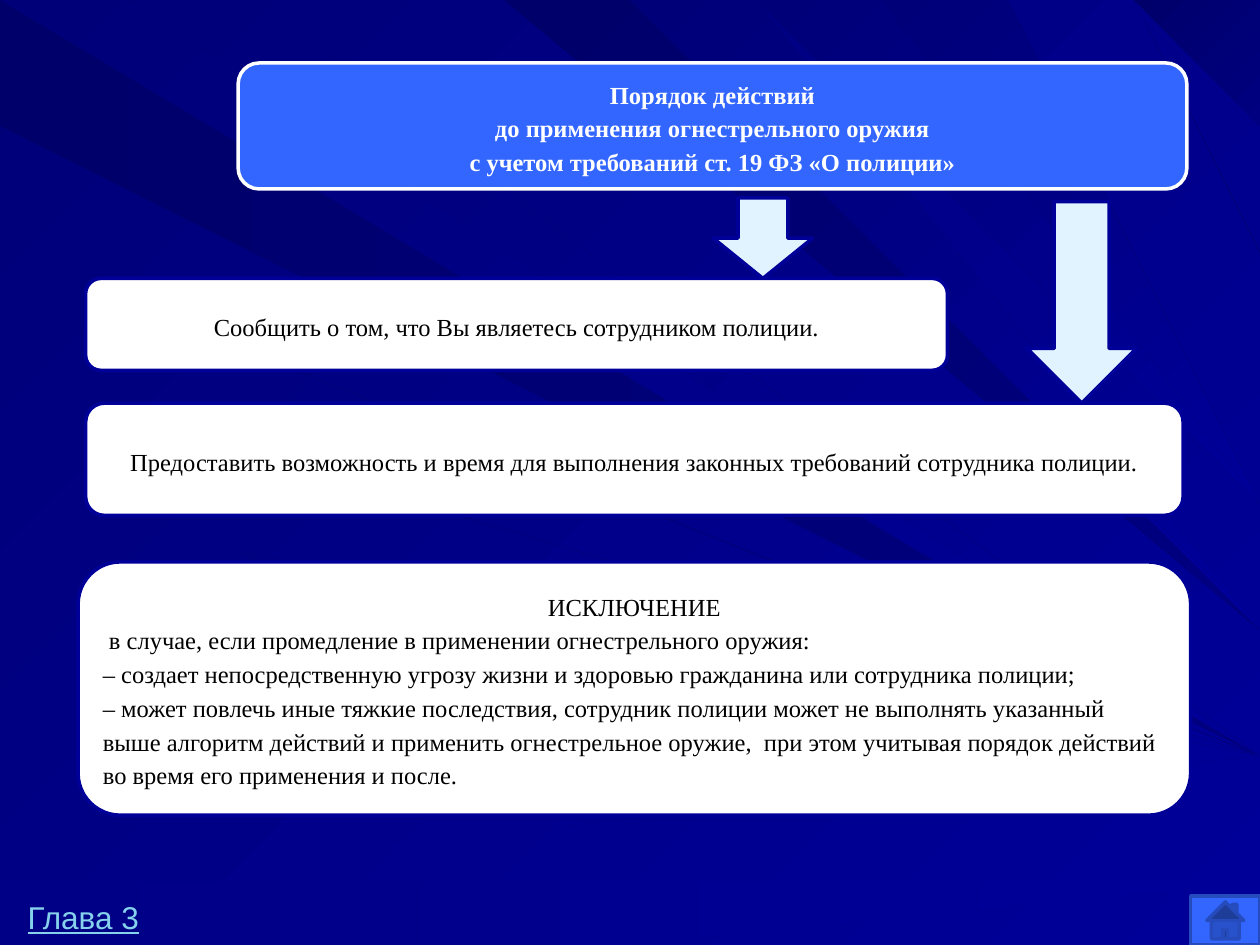
from pptx import Presentation, util as u
from pptx.dml.color import RGBColor
from pptx.enum import shapes, text

DARK, MIDDLE, LIGHT = RGBColor(0, 0, 0x6B), RGBColor(0, 0, 0x78), RGBColor(0, 0, 0x86)
NAVY, ROYAL = RGBColor(0, 0, 0x80), RGBColor(0, 0, 0x99)
SLATE = RGBColor(0x39, 0x39, 0x9E)
WHITE, BLACK = RGBColor(0xFF, 0xFF, 0xFF), RGBColor(0, 0, 0)
BLUE, BUTTON_EDGE = RGBColor(0x33, 0x66, 0xFF), RGBColor(0x26, 0x4B, 0xBD)
PALE = RGBColor(0xE0, 0xF3, 0xFF)
LINK = RGBColor(0x86, 0xD1, 0xEC)

WIDTH, HEIGHT = 10, 7.5

# Each ray: where it starts and ends on its edge, and its tip on the right edge
LEFT_RAYS = [
    (DARK, 0, 0.9, 5.7),
    (DARK, 6, 6.2, 6.3),
    (LIGHT, 6.65, 7, 6.5),
    (LIGHT, 7.35, 7.5, 6.6),
    (MIDDLE, 2.6, 2.7, 5.9),
    (DARK, 1.6, 2.3, 5.85),
    (MIDDLE, 2.8, 3.4, 6),
    (MIDDLE, 3.75, 4.4, 6.05),
    (LIGHT, 5.5, 5.6, 6.2),
]
TOP_RAYS = [
    (MIDDLE, 0.25, 1, 5.6),
    (LIGHT, 4, 4.15, 5.2),
    (DARK, 4.25, 4.9, 4.95),
    (MIDDLE, 5.4, 5.5, 4.6),
    (MIDDLE, 6.05, 6.6, 4.45),
    (DARK, 8.9, 9.3, 2.1),
    (DARK, 9.4, 9.65, 1.4),
    (MIDDLE, 2.25, 2.5, 5.5),
    (MIDDLE, 6.85, 7.7, 4.1),
    (MIDDLE, 7.85, 7.95, 3.55),
    (LIGHT, 8.15, 8.25, 3.35),
]
GLINT = [(10, 6.94), (10, 6.72), (7.56, 7.02), (8, 7.37)]

TITLE = ["Порядок действий", "до применения огнестрельного оружия",
         "с учетом требований ст. 19 ФЗ «О полиции»"]
EXCEPTION = [
    "ИСКЛЮЧЕНИЕ",
    " в случае, если промедление в применении огнестрельного оружия:",
    "‒ создает непосредственную угрозу жизни и здоровью гражданина или сотрудника полиции;",
    "‒ может повлечь иные тяжкие последствия, сотрудник полиции может не выполнять указанный "
    "выше алгоритм действий и применить огнестрельное оружие,  при этом учитывая порядок "
    "действий во время его применения и после.",
]


def fill_gradient(fill, start, end, angle):
    """Blend two colours; the angle runs clockwise."""
    fill.gradient()
    fill.gradient_angle = -angle % 360
    for stop, color in zip(fill.gradient_stops, (start, end)):
        stop.color.rgb = color


class SlideBuilder:
    body_font = "Times New Roman"
    body_size = u.Pt(14)
    line_spacing = 1.15
    line_width = u.Pt(2)

    def __init__(self, slide):
        self.slide = slide

    def background(self, start, end, angle):
        fill_gradient(self.slide.background.fill, start, end, angle)

    def facet(self, corners, start, end, angle):
        builder = self.slide.shapes.build_freeform(*corners[0], scale=u.Inches(1))
        builder.add_line_segments(corners[1:], close=True)
        shape = builder.convert_to_shape()
        shape.shadow.inherit = False
        shape.line.fill.background()
        fill_gradient(shape.fill, start, end, angle)

    def ray(self, corners, shade, angle):
        self.facet(corners, shade, NAVY if shade == DARK else ROYAL, angle)

    def preset(self, kind, box, fill, line):
        shape = self.slide.shapes.add_shape(kind, *map(u.Inches, box))
        shape.shadow.inherit = False
        shape.fill.solid()
        shape.fill.fore_color.rgb = fill
        shape.line.color.rgb = line
        shape.line.width = self.line_width
        return shape

    def arrow(self, *box):
        self.preset(shapes.MSO_SHAPE.DOWN_ARROW, box, PALE, ROYAL)

    def panel(self, box, lines, fill=WHITE, line=ROYAL, color=BLACK, bold=False, centered=None):
        """Rounded box; only the first `centered` lines are centred, or all if None."""
        shape = self.preset(shapes.MSO_SHAPE.ROUNDED_RECTANGLE, box, fill, line)
        frame = shape.text_frame
        frame.word_wrap = True
        frame.vertical_anchor = text.MSO_ANCHOR.MIDDLE
        frame.text = "\n".join(lines)
        for index, paragraph in enumerate(frame.paragraphs):
            is_centered = centered is None or index < centered
            paragraph.alignment = text.PP_ALIGN.CENTER if is_centered else text.PP_ALIGN.LEFT
            paragraph.line_spacing = self.line_spacing
            font = paragraph.runs[0].font
            font.name, font.size, font.bold = self.body_font, self.body_size, bold
            font.color.rgb = color

    def chapter_label(self, label, *box):
        frame = self.slide.shapes.add_textbox(*map(u.Inches, box)).text_frame
        frame.word_wrap = False
        frame.text = label
        font = frame.paragraphs[0].runs[0].font
        font.name, font.size, font.underline = "Arial", u.Pt(18), True
        font.color.rgb = LINK


def main():
    presentation = Presentation()
    presentation.slide_width, presentation.slide_height = u.Inches(WIDTH), u.Inches(HEIGHT)
    builder = SlideBuilder(presentation.slides.add_slide(presentation.slide_layouts[6]))

    builder.background(MIDDLE, ROYAL, 45)
    for shade, start, end, tip in LEFT_RAYS:
        builder.ray([(0, start), (0, end), (WIDTH, tip)], shade, 0)
    for shade, start, end, tip in TOP_RAYS:
        builder.ray([(start, 0), (end, 0), (WIDTH, tip)], shade, 45)
    builder.facet(GLINT, ROYAL, SLATE, 0)

    builder.chapter_label("Глава 3", 0.12, 7.08, 1.09, 0.4)
    builder.preset(shapes.MSO_SHAPE.ACTION_BUTTON_HOME, (9.45, 7.11, 0.55, 0.39), BLUE, BUTTON_EDGE)

    builder.panel((1.89, 0.5, 7.53, 1), TITLE, fill=BLUE, line=WHITE, color=WHITE, bold=True)
    builder.panel((0.68, 2.21, 6.84, 0.73),
                  ["Сообщить о том, что Вы являетесь сотрудником полиции."])
    builder.arrow(5.66, 1.57, 0.79, 0.64)
    builder.panel((0.68, 3.2, 8.71, 0.89),
                  ["Предоставить возможность и время для выполнения законных требований "
                   "сотрудника полиции."])
    builder.arrow(8.15, 1.6, 0.87, 1.6)
    builder.panel((0.62, 4.46, 8.83, 2.01), EXCEPTION, centered=1)

    presentation.save("out.pptx")


if __name__ == "__main__":
    main()
